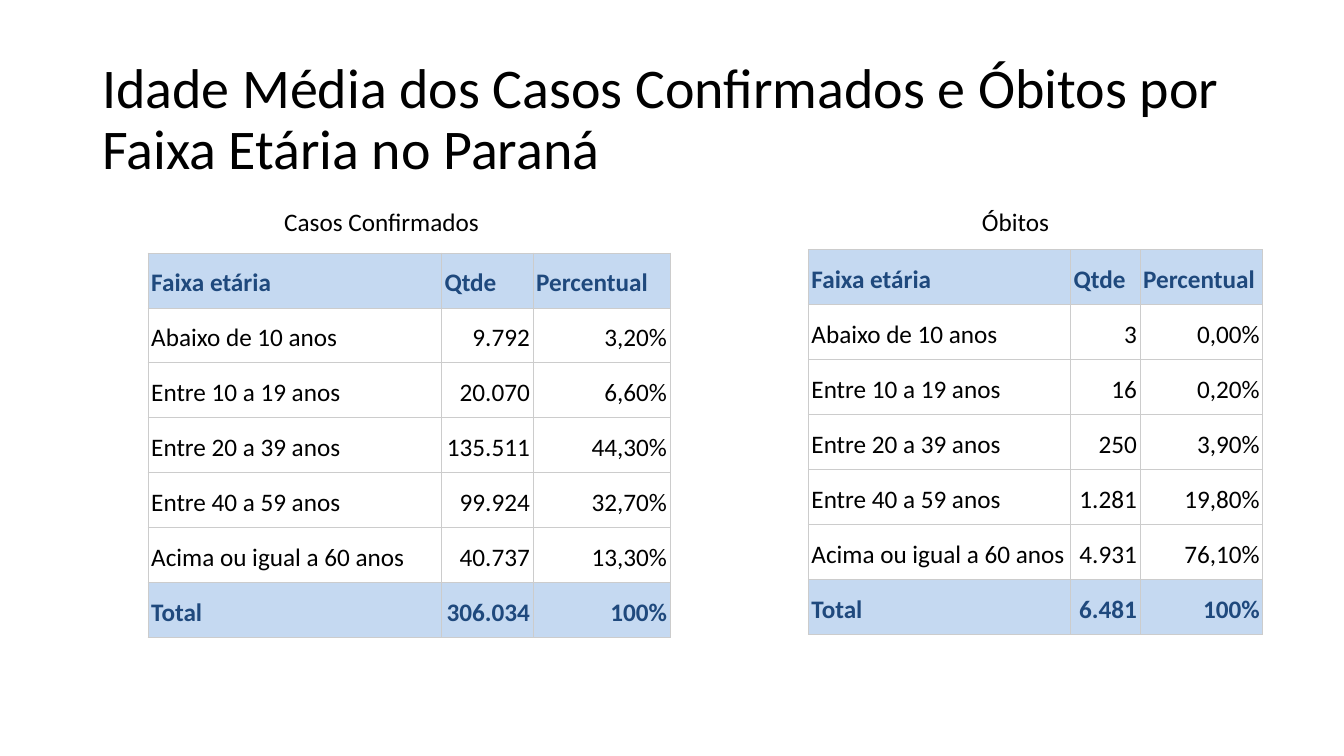
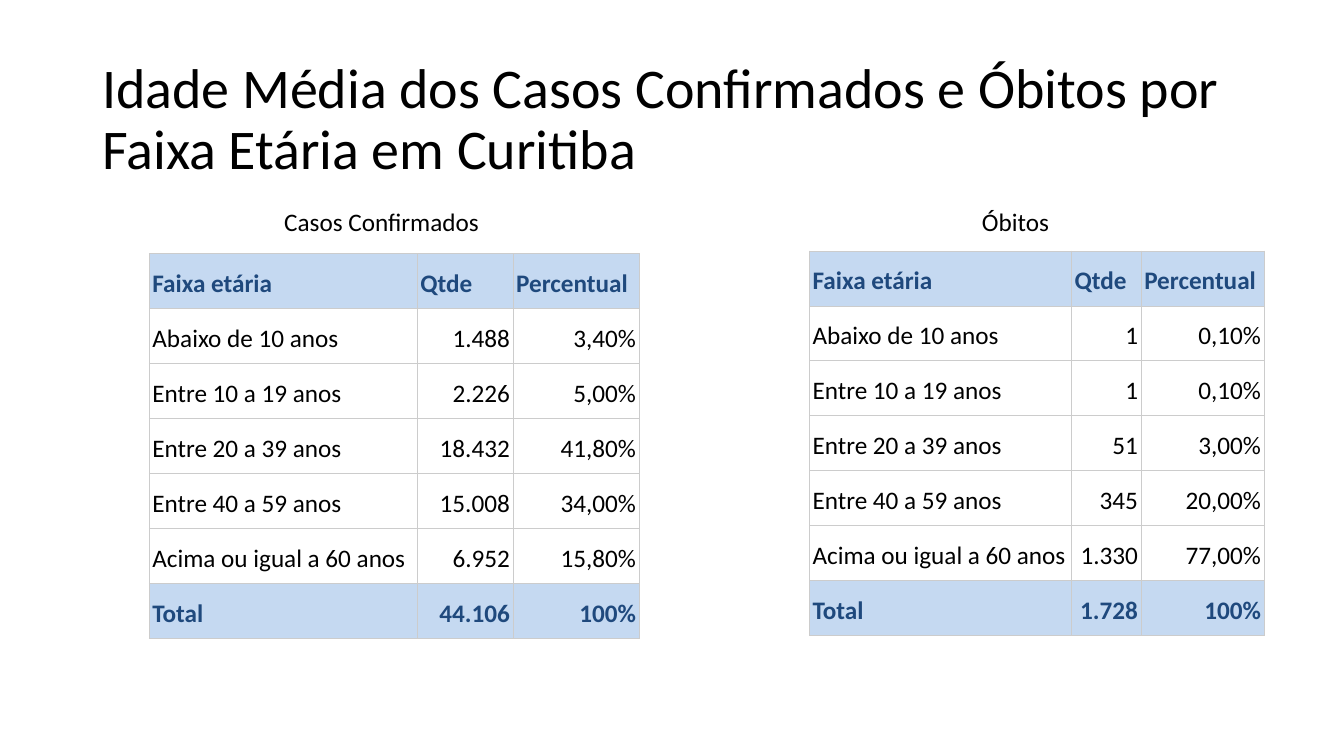
from dataclasses import dataclass

from lxml import etree
from pptx import Presentation
from pptx.dml.color import RGBColor
from pptx.enum.text import MSO_ANCHOR as Anchor, MSO_AUTO_SIZE as AutoSize, PP_ALIGN as Align
from pptx.oxml.ns import qn
from pptx.slide import Slide
from pptx.table import _Cell as Cell
from pptx.text.text import _Paragraph as Paragraph
from pptx.util import Pt

FONT = "Calibri"
BLACK, NAVY, PALE_BLUE, GRID = "000000", "1F497D", "C5D9F1", "CCCCCC"
TITLE_SIZE, TEXT_SIZE = 40, 18
CAPTION_TOP, CAPTION_WIDTH, CAPTION_HEIGHT = 144, 209.5, 29
ROW_HEIGHT = 39.2
CELL_SIDE, CELL_TOP = 2.25, 7.2
BORDER_WIDTH = 0.75

HEADER = ("Faixa etária", "Qtde", "Percentual")
AGE_GROUPS = ("Abaixo de 10 anos", "Entre 10 a 19 anos", "Entre 20 a 39 anos",
              "Entre 40 a 59 anos", "Acima ou igual a 60 anos", "Total")


@dataclass(frozen=True)
class AgeTable:
    caption: str
    caption_left: float
    left: float
    top: float
    widths: tuple[float, ...]
    counts: tuple[str, ...]
    shares: tuple[str, ...]


@dataclass(frozen=True)
class AgeSlide:
    title: str
    tables: tuple[AgeTable, ...]


def confirmed(left: float, top: float, widths: tuple[float, ...],
              counts: tuple[str, ...], shares: tuple[str, ...]) -> AgeTable:
    return AgeTable("Casos Confirmados", 167.8, left, top, widths, counts, shares)


def deaths(left: float, top: float, counts: tuple[str, ...], shares: tuple[str, ...]) -> AgeTable:
    return AgeTable("Óbitos", 620.6, left, top, (187.2, 49.7, 87.8), counts, shares)


SLIDES = (
    AgeSlide("Idade Média dos Casos Confirmados e Óbitos por Faixa Etária no Paraná", (
        confirmed(105.8, 180.7, (209.5, 65.5, 97.9),
                  ("9.792", "20.070", "135.511", "99.924", "40.737", "306.034"),
                  ("3,20%", "6,60%", "44,30%", "32,70%", "13,30%", "100%")),
        deaths(577.4, 178.4,
               ("3", "16", "250", "1.281", "4.931", "6.481"),
               ("0,00%", "0,20%", "3,90%", "19,80%", "76,10%", "100%")),
    )),
    AgeSlide("Idade Média dos Casos Confirmados e Óbitos por Faixa Etária em Curitiba", (
        confirmed(106.6, 181.4, (191.5, 68.4, 90),
                  ("1.488", "2.226", "18.432", "15.008", "6.952", "44.106"),
                  ("3,40%", "5,00%", "41,80%", "34,00%", "15,80%", "100%")),
        deaths(578.2, 179.3,
               ("1", "1", "51", "345", "1.330", "1.728"),
               ("0,10%", "0,10%", "3,00%", "20,00%", "77,00%", "100%")),
    )),
)


def rgb(color: str) -> RGBColor:
    return RGBColor.from_string(color)


def add_run(p: Paragraph, text: str, size: float, color: str = BLACK, bold: bool = False) -> None:
    r = p.add_run()
    r.text = text
    r.font.name, r.font.size, r.font.bold = FONT, Pt(size), bold
    r.font.color.rgb = rgb(color)


def add_title(s: Slide, text: str) -> None:
    tf = s.shapes.add_textbox(Pt(66), Pt(28.8), Pt(828), Pt(104.4)).text_frame
    tf.word_wrap = True
    tf.vertical_anchor = Anchor.BOTTOM
    p = tf.paragraphs[0]
    p.line_spacing = 0.9
    add_run(p, text, TITLE_SIZE)


def add_caption(s: Slide, text: str, left: float) -> None:
    box = s.shapes.add_textbox(Pt(left), Pt(CAPTION_TOP), Pt(CAPTION_WIDTH), Pt(CAPTION_HEIGHT))
    tf = box.text_frame
    tf.word_wrap = True
    tf.auto_size = AutoSize.SHAPE_TO_FIT_TEXT
    p = tf.paragraphs[0]
    p.alignment = Align.CENTER
    add_run(p, text, TEXT_SIZE)


def set_borders(cell: Cell) -> None:
    tc_pr = cell._tc.get_or_add_tcPr()
    for side in ("a:lnL", "a:lnR", "a:lnT", "a:lnB"):
        ln = etree.SubElement(tc_pr, qn(side), w=str(Pt(BORDER_WIDTH)))
        fill = etree.SubElement(ln, qn("a:solidFill"))
        etree.SubElement(fill, qn("a:srgbClr"), val=GRID)


def fill_cell(cell: Cell, text: str, align: Align, emphasized: bool) -> None:
    set_borders(cell)
    if emphasized:
        cell.fill.solid()
        cell.fill.fore_color.rgb = rgb(PALE_BLUE)
    else:
        cell.fill.background()
    cell.margin_left = cell.margin_right = Pt(CELL_SIDE)
    cell.margin_top = cell.margin_bottom = Pt(CELL_TOP)
    cell.vertical_anchor = Anchor.BOTTOM
    p = cell.text_frame.paragraphs[0]
    p.alignment = align
    p.line_spacing = 1.15
    add_run(p, text, TEXT_SIZE, NAVY if emphasized else BLACK, emphasized)


def add_age_table(s: Slide, spec: AgeTable) -> None:
    rows = [HEADER, *zip(AGE_GROUPS, spec.counts, spec.shares)]
    frame = s.shapes.add_table(len(rows), len(HEADER), Pt(spec.left), Pt(spec.top),
                               Pt(sum(spec.widths)), Pt(ROW_HEIGHT * len(rows)))
    table = frame.table
    table.horz_banding = False
    for column, width in zip(table.columns, spec.widths):
        column.width = Pt(width)
    for i, values in enumerate(rows):
        table.rows[i].height = Pt(ROW_HEIGHT)
        for j, text in enumerate(values):
            align = Align.RIGHT if i and j else Align.LEFT
            fill_cell(table.cell(i, j), text, align, i in (0, len(rows) - 1))


def main() -> None:
    prs = Presentation()
    prs.slide_width, prs.slide_height = Pt(960), Pt(540)
    for content in SLIDES:
        s = prs.slides.add_slide(prs.slide_layouts[6])
        add_title(s, content.title)
        for table in content.tables:
            add_caption(s, table.caption, table.caption_left)
            add_age_table(s, table)
    prs.save("out.pptx")


if __name__ == "__main__":
    main()
